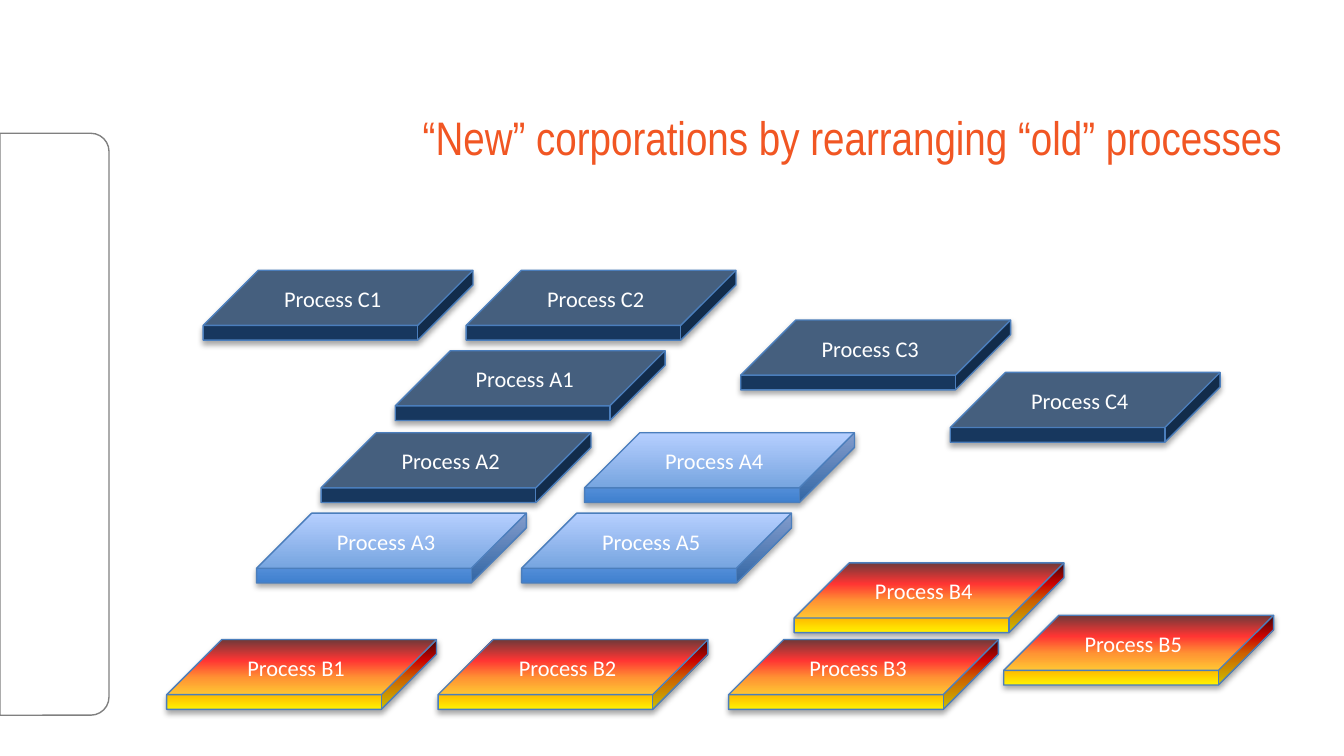
import pptx
import pptx.util
import pptx.dml.color
import pptx.enum.shapes
import pptx.enum.text
import pptx.oxml
import pptx.oxml.ns

Cm = pptx.util.Cm
Pt = pptx.util.Pt
RGBColor = pptx.dml.color.RGBColor
Kind = pptx.enum.shapes.MSO_SHAPE
Align = pptx.enum.text.PP_ALIGN
Anchor = pptx.enum.text.MSO_ANCHOR
Fit = pptx.enum.text.MSO_AUTO_SIZE

WHITE = RGBColor(0xFF, 0xFF, 0xFF)
GRAY = RGBColor(0x80, 0x80, 0x80)
ORANGE = RGBColor(0xF1, 0x56, 0x23)
EDGE = RGBColor(0x4B, 0x7E, 0xBC)
NAVY = RGBColor(0x17, 0x37, 0x5E)
SKY = [(0, RGBColor(0x3F, 0x80, 0xCE)), (100, RGBColor(0xA4, 0xC4, 0xFF))]
FIRE = [
    (0, RGBColor(0xFF, 0xF2, 0x00)),
    (45, RGBColor(0xFF, 0x7A, 0x00)),
    (70, RGBColor(0xFF, 0x03, 0x00)),
    (100, RGBColor(0x4D, 0x08, 0x08)),
]
SPACE = pptx.oxml.ns.nsdecls("a")
SHADOW = (
    f'<a:outerShdw {SPACE} blurRad="40000" dist="23000" dir="5400000" rotWithShape="0">'
    '<a:srgbClr val="000000"><a:alpha val="35000"/></a:srgbClr></a:outerShdw>'
)


def style(item, form):
    for key, value in form.items():
        setattr(item, key, value)


def blend(shape, stops):
    shape.fill.gradient()
    shape.fill.gradient_angle = 90
    ramp = shape.element.spPr.find(".//" + pptx.oxml.ns.qn("a:gsLst"))
    for old in list(ramp):
        ramp.remove(old)
    for place, color in stops:
        ramp.append(pptx.oxml.parse_xml(
            f'<a:gs {SPACE} pos="{place * 1000}"><a:srgbClr val="{color}"/></a:gs>'))


deck = pptx.Presentation()
style(deck, {"slide_width": Cm(25.4), "slide_height": Cm(14.29)})
slide = deck.slides.add_slide(deck.slide_layouts[5])

title = slide.shapes.title
style(title, {"left": Cm(3.15), "top": Cm(2.06), "width": Cm(21.34), "height": Cm(1.04)})
title.text = "“New” corporations by rearranging “old” processes"
style(title.text_frame, {"auto_size": Fit.NONE, "word_wrap": True, "vertical_anchor": Anchor.MIDDLE})
head = title.text_frame.paragraphs[0]
head.alignment = Align.RIGHT
style(head.font, {"name": "Arial Narrow", "size": Pt(25.2)})
head.font.color.rgb = ORANGE

bar = slide.shapes.add_shape(Kind.ROUND_2_SAME_RECTANGLE, Cm(-4.47), Cm(6.99), Cm(11), Cm(2.06))
bar.rotation = 90
bar.shadow.inherit = False
bar.fill.background()
bar.line.color.rgb = GRAY
bar.line.width = Pt(0.75)

ROW_A, ROW_B, ROW_C = 9.7, 12.09, 5.11
groups = [
    [
        ("A3", 4.85, ROW_A, SKY),
        ("A4", 11.05, 8.18, SKY),
        ("A5", 9.86, ROW_A, SKY),
        ("B5", 18.97, 11.63, FIRE),
        ("B4", 15.01, 10.64, FIRE),
        ("B3", 13.77, ROW_B, FIRE),
        ("B2", 8.28, ROW_B, FIRE),
        ("B1", 3.15, ROW_B, FIRE),
    ],
    [
        ("A2", 6.07, 8.18, NAVY),
        ("A1", 7.47, 6.63, NAVY),
        ("C1", 3.84, ROW_C, NAVY),
        ("C2", 8.81, ROW_C, NAVY),
        ("C4", 17.96, 7.04, NAVY),
        ("C3", 14, 6.05, NAVY),
    ],
]
frame = {
    "margin_left": Cm(1.09),
    "margin_top": 0,
    "margin_right": Cm(0.25),
    "margin_bottom": Cm(1.3),
    "word_wrap": True,
    "vertical_anchor": Anchor.MIDDLE,
}

for tiles in groups:
    group = slide.shapes.add_group_shape()
    for name, left, top, paint in tiles:
        cube = group.shapes.add_shape(Kind.CUBE, Cm(left), Cm(top), Cm(5.1), Cm(1.32))
        cube.adjustments[0] = 0.79
        if paint is NAVY:
            cube.fill.solid()
            cube.fill.fore_color.rgb = paint
        else:
            blend(cube, paint)
        cube.line.color.rgb = EDGE
        cube.line.width = Pt(0.75)
        cube.shadow.inherit = False
        glow = cube.element.spPr.find(pptx.oxml.ns.qn("a:effectLst"))
        glow.append(pptx.oxml.parse_xml(SHADOW))
        cube.text_frame.text = f"Process {name}"
        style(cube.text_frame, frame)
        label = cube.text_frame.paragraphs[0]
        label.alignment = Align.CENTER
        style(label.font, {"name": "Calibri", "size": Pt(12)})
        label.font.color.rgb = WHITE

deck.save("out.pptx")
